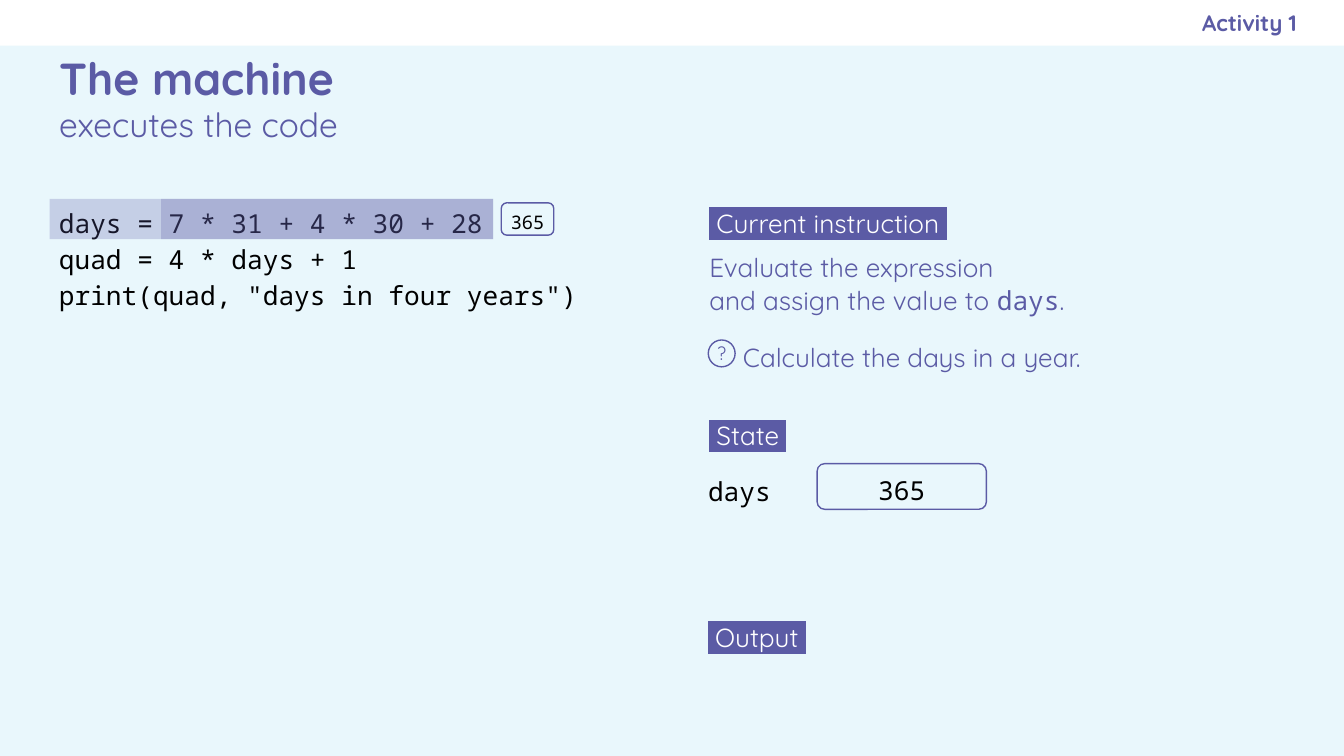
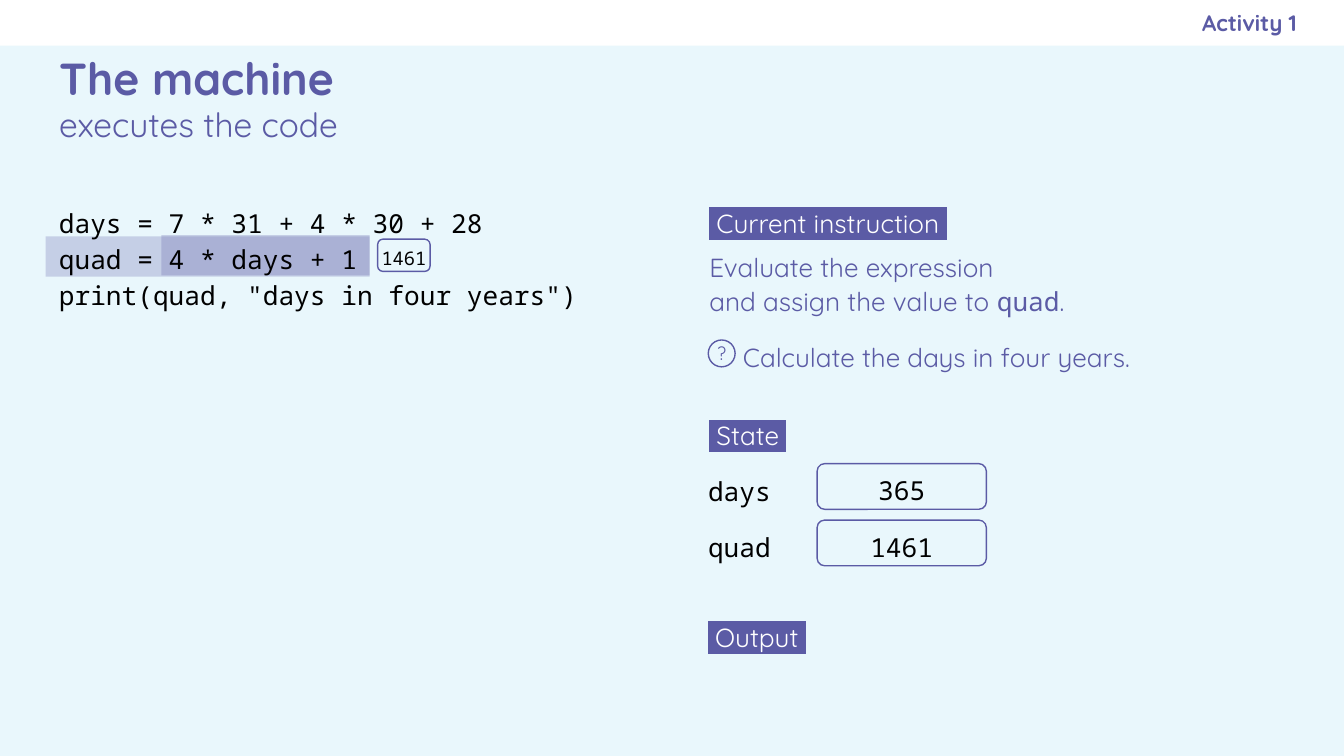
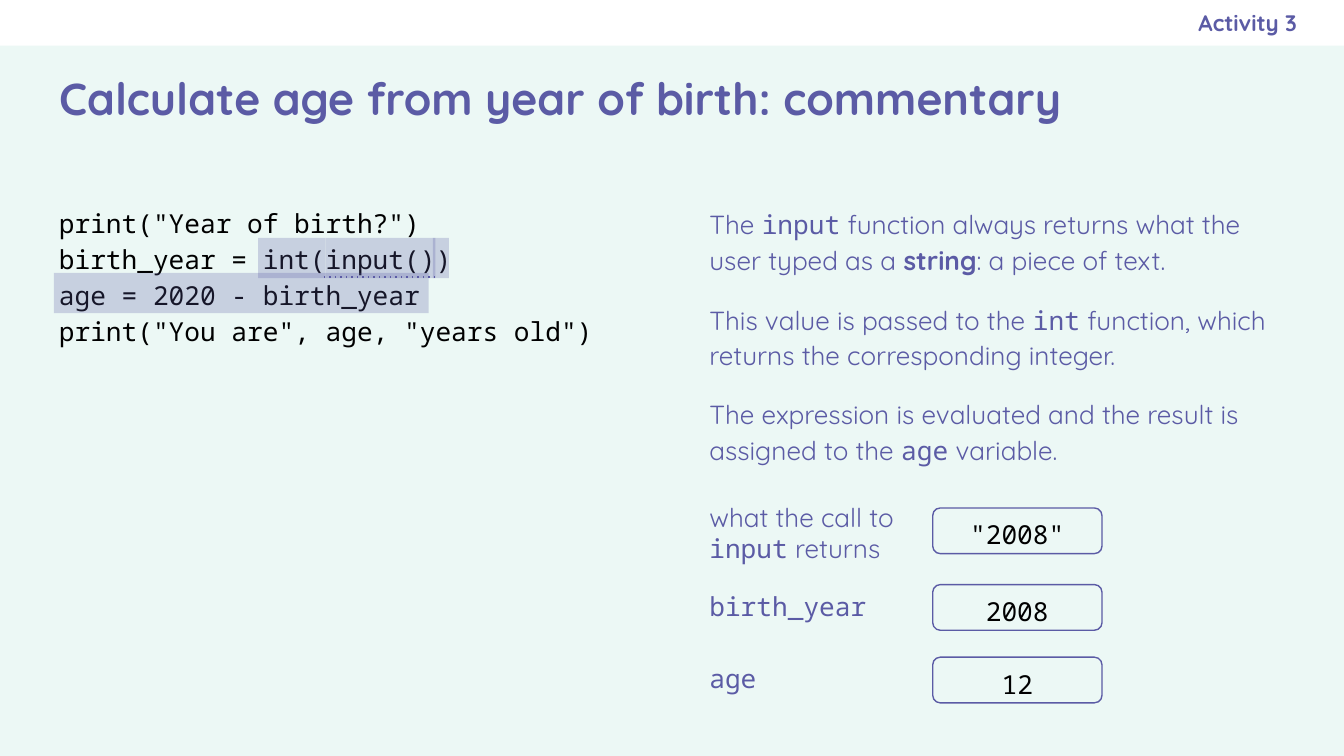
from dataclasses import dataclass

from lxml import etree
from pptx import Presentation
from pptx.dml.color import RGBColor
from pptx.enum.shapes import MSO_CONNECTOR, MSO_SHAPE
from pptx.enum.text import MSO_ANCHOR, MSO_AUTO_SIZE, PP_ALIGN
from pptx.oxml.ns import qn
from pptx.util import Emu, Pt

RECT = MSO_SHAPE.RECTANGLE
ROUND = MSO_SHAPE.ROUNDED_RECTANGLE
OVAL = MSO_SHAPE.OVAL
STRAIGHT = MSO_CONNECTOR.STRAIGHT
TOP, MIDDLE = MSO_ANCHOR.TOP, MSO_ANCHOR.MIDDLE
LEFT, CENTER, RIGHT = PP_ALIGN.LEFT, PP_ALIGN.CENTER, PP_ALIGN.RIGHT
FIXED = MSO_AUTO_SIZE.NONE
SCALE = 9144


@dataclass(frozen=True)
class Theme:
    purple: str = "5B5BA5"
    white: str = "FFFFFF"
    black: str = "000000"
    sky: str = "E9F7FC"
    mint: str = "ECF8F5"
    sans: str = "Quicksand"
    mono: str = "Noto Sans Mono"
    title: int = 24
    lead: int = 18
    body: int = 14
    tag: int = 12
    small: int = 10
    line: float = 0.75
    code_gap: float = 1.15
    text_gap: float = 1.14


THEME = Theme()
PAD = (10, 10, 10, 10)
SIDE = (10, 10, 6, 10)
RIGHT_X = 518
CODE = ("days = 7 * 31 + 4 * 30 + 28", "quad = 4 * days + 1",
        'print(quad, "days in four years")')
AGE_CODE = ('print("Year of birth?")', "birth_year = int(input())",
            "age = 2020 - birth_year", 'print("You are", age, "years old")')


def px(count):
    return Emu(count * SCALE)


def rgb(code):
    return RGBColor.from_string(code)


def frame(shape, pad=PAD, anchor=TOP):
    box = shape.text_frame
    box.word_wrap = True
    box.auto_size = FIXED
    box.vertical_anchor = anchor
    box.margin_left, box.margin_top, box.margin_right, box.margin_bottom = map(px, pad)
    return box


def style(para, size, face=THEME.sans, color=THEME.purple, align=LEFT, gap=1.0, bold=False):
    para.alignment = align
    para.line_spacing = gap
    para.space_before = Pt(0)
    font = para.font
    font.name, font.size, font.bold = face, Pt(size), bold
    font.color.rgb = rgb(color)


def fill_in(para, text):
    for i, chunk in enumerate(text.split("`")):
        for j, piece in enumerate(chunk.split("|")):
            if piece:
                run = para.add_run()
                run.text = piece
                if i % 2:
                    run.font.name = THEME.mono
                if j % 2:
                    run.font.bold = True


def write(box, lines, **look):
    for i, line in enumerate(lines):
        para = box.add_paragraph() if i else box.paragraphs[0]
        fill_in(para, line)
        style(para, **look)


def text(slide, x, y, w, h, lines, pad=PAD, anchor=TOP, **look):
    shape = slide.shapes.add_textbox(px(x), px(y), px(w), px(h))
    write(frame(shape, pad, anchor), lines, **look)
    return shape


def code(slide, w, h, lines):
    text(slide, 34, 141, w, h, lines, size=THEME.body, face=THEME.mono,
         color=THEME.black, gap=THEME.code_gap)


def note(slide, y, line, x=RIGHT_X, w=447, h=40):
    text(slide, x, y, w, h, [line], pad=SIDE, size=THEME.body, gap=THEME.text_gap)


def label(slide, x, y, w, name):
    shape = text(slide, x, y, w, 40, [f" {name} "], pad=SIDE, size=THEME.body,
                 color=THEME.white, gap=THEME.text_gap)
    props = shape.element.find(".//" + qn("a:rPr"))
    if props is None:
        props = shape.text_frame.paragraphs[0].runs[0].font._rPr
    tint = etree.SubElement(props, qn("a:highlight"))
    etree.SubElement(tint, qn("a:srgbClr"), val=THEME.purple)


def solid(slide, x, y, w, h, color):
    shape = slide.shapes.add_shape(RECT, px(x), px(y), px(w), px(h))
    shape.shadow.inherit = False
    shape.fill.solid()
    shape.fill.fore_color.rgb = rgb(color)
    shape.line.fill.background()
    return shape


def mark(slide, x, y, w):
    shape = solid(slide, x, y, w, 30, THEME.purple)
    tone = shape.element.spPr.find(qn("a:solidFill")).find(qn("a:srgbClr"))
    etree.SubElement(tone, qn("a:alpha"), val="25000")


def ring(slide, kind, x, y, w, h, value, pad, **look):
    shape = slide.shapes.add_shape(kind, px(x), px(y), px(w), px(h))
    shape.shadow.inherit = False
    shape.fill.background()
    shape.line.color.rgb = rgb(THEME.purple)
    shape.line.width = Pt(THEME.line)
    write(frame(shape, pad, MIDDLE), [value], align=CENTER, **look)


def value(slide, x, y, w, h, shown, size=THEME.body, side=10):
    ring(slide, ROUND, x, y, w, h, shown, (side, 2, side, 0), size=size,
         face=THEME.mono, color=THEME.black, gap=THEME.code_gap)


def result(slide, x, y, shown):
    value(slide, x, y, 39, 24, shown, THEME.small, 0)


def state(slide, pairs):
    for i, (name, shown) in enumerate(pairs):
        y = 340 + 42 * i
        text(slide, 517, y, 150, 40, [name], size=THEME.body, face=THEME.mono,
             color=THEME.black, gap=THEME.code_gap)
        value(slide, 608, y + 5, 126, 34, shown)


def goal(slide, line):
    note(slide, 241, line, x=543, w=364)
    ring(slide, OVAL, 527, 253, 20, 20, "?", (0, 0, 0, 0), size=THEME.small)


def dots(slide, x, y, end):
    line = slide.shapes.add_connector(STRAIGHT, px(x), px(y), px(end), px(y))
    line.line.color.rgb = rgb(THEME.purple)
    line.line.width = Pt(THEME.line)
    props = line.element.spPr
    etree.SubElement(props.find(qn("a:ln")), qn("a:prstDash"), val="dot")
    etree.SubElement(props, qn("a:effectLst"))


def place(shape, x, y, w, h):
    shape.left, shape.top, shape.width, shape.height = map(px, (x, y, w, h))


def start(deck, color, tag, title, lead=None):
    slide = deck.slides.add_slide(deck.slide_layouts[0])
    slide.background.fill.solid()
    slide.background.fill.fore_color.rgb = rgb(color)
    head, sub = slide.placeholders
    place(head, 34, 34, 932, 77)
    box = frame(head, anchor=MIDDLE)
    write(box, [title], size=THEME.title, bold=True)
    if lead:
        para = box.add_paragraph()
        fill_in(para, lead)
        style(para, THEME.lead)
    place(sub, 575, 0, 390, 34)
    write(frame(sub, (10, 10, 0, 10), MIDDLE), [tag], size=THEME.tag, align=RIGHT, bold=True)
    return slide


def add_band(deck, slide):
    band = solid(slide, 0, 0, 1000, 34, THEME.white)
    band.element.nvSpPr.cNvPr.set("id", "99")
    deck.slide_layouts[0].shapes.element.insert(2, band.element)


def machine(deck):
    return start(deck, THEME.sky, "Activity 1", "The machine", "executes the code")


def panel(slide, name, y, aim, pairs):
    label(slide, RIGHT_X, 141, 447, "Current instruction")
    label(slide, RIGHT_X, 299, 447, "State")
    label(slide, 517, 449, 390, "Output")
    note(slide, 174, "Evaluate the expression")
    note(slide, y, f"and assign the value to `{name}`.")
    goal(slide, aim)
    state(slide, pairs)


def days_slide(deck):
    slide = machine(deck)
    add_band(deck, slide)
    code(slide, 484, 100, CODE)
    mark(slide, 37, 148, 330)
    mark(slide, 120, 148, 247)
    panel(slide, "days", 198, "Calculate the days in a year.", [("days", "365")])
    result(slide, 373, 151, "365")


def quad_slide(deck):
    slide = machine(deck)
    mark(slide, 34, 176, 241)
    mark(slide, 120, 175, 155)
    panel(slide, "quad", 199, "Calculate the days in four years.",
          [("days", "365"), ("quad", "1461")])
    code(slide, 484, 100, CODE)
    result(slide, 281, 178, "1461")


def age_slide(deck):
    slide = start(deck, THEME.mint, "Activity 3",
                  "Calculate age from year of birth: commentary")
    code(slide, 447, 126, AGE_CODE)
    for x, y, w in ((242, 177, 82), (192, 177, 50), (322, 177, 12), (40, 203, 279)):
        mark(slide, x, y, w)
    dots(slide, 241, 206, 324)
    notes = (
        (142, "The `input` function always returns what the user typed as a |string|: "
              "a piece of text."),
        (213, "This value is passed to the `int` function, which returns the "
              "corresponding integer."),
        (283, "The expression is evaluated and the result is assigned to the `age` variable."),
    )
    for y, line in notes:
        note(slide, y, line, h=70)
    rows = (
        ("what the call to `input` returns", 363, 64, TOP, '"2008"', 378),
        ("`birth_year`", 419, 64, MIDDLE, "2008", 435),
        ("`age`", 483, 34, TOP, "12", 489),
    )
    for name, y, h, anchor, shown, top in rows:
        text(slide, RIGHT_X, y, 160, h, [name], anchor=anchor, size=THEME.body)
        value(slide, 694, top, 126, 34, shown)


def main():
    deck = Presentation()
    deck.slide_width = px(1000)
    deck.slide_height = Emu(deck.slide_width * 9 // 16)
    days_slide(deck)
    quad_slide(deck)
    age_slide(deck)
    deck.save("out.pptx")


if __name__ == "__main__":
    main()
